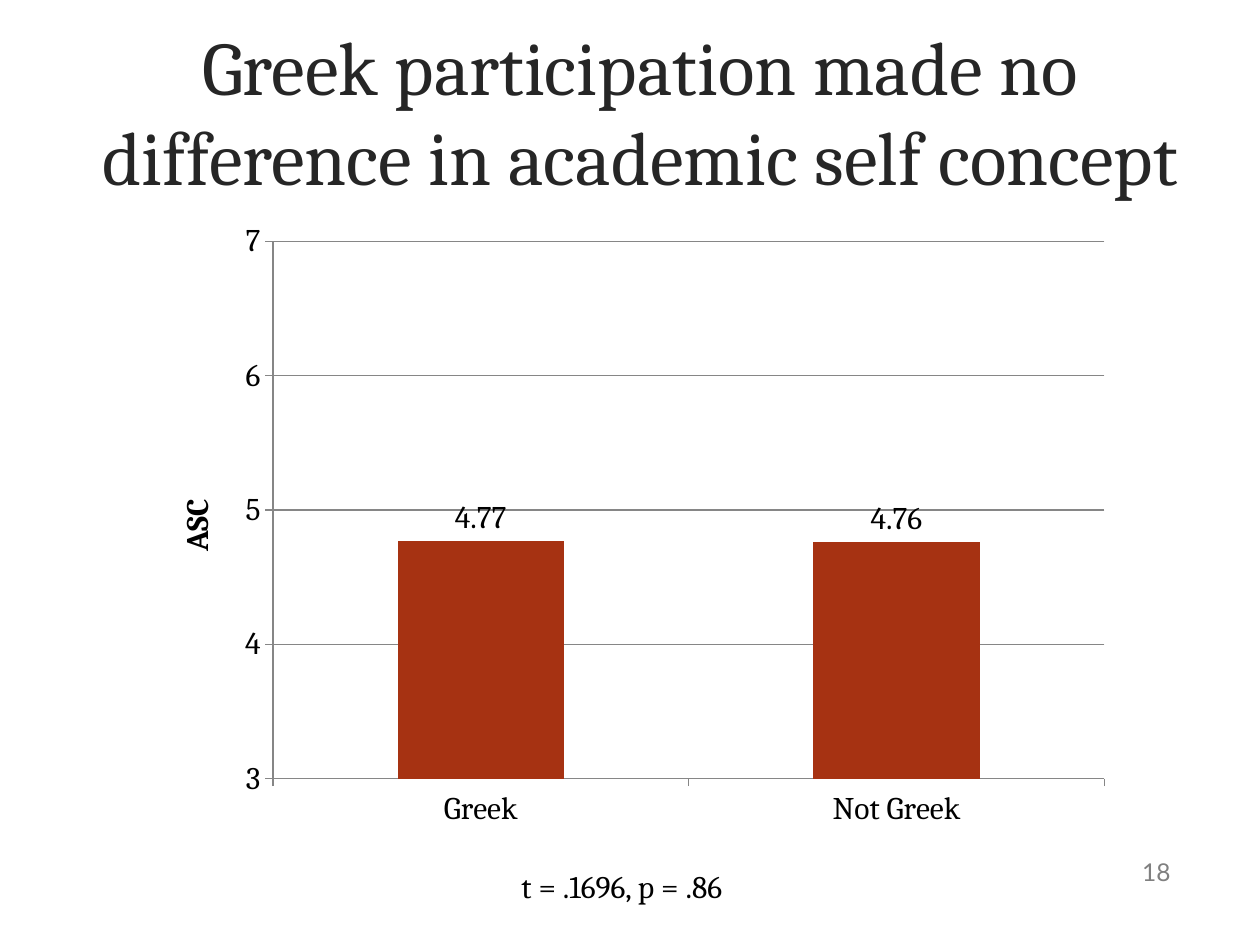
import dataclasses

import pptx
import pptx.chart.data
import pptx.dml.color
import pptx.enum.chart
import pptx.enum.text
import pptx.util
from pptx.util import Inches

COLORS = {
    "title": "262626",
    "text": "000000",
    "number": "808080",
    "bar": "A63212",
    "rule": "868686",
}
SERIF = "Cambria"
SANS = "Lato"
ALIGN = pptx.enum.text.PP_ALIGN
ANCHOR = pptx.enum.text.MSO_ANCHOR


@dataclasses.dataclass(frozen=True)
class Box:
    left: float
    top: float
    width: float
    height: float

    def lengths(self) -> tuple:
        return tuple(Inches(value) for value in dataclasses.astuple(self))


def rgb(name: str) -> pptx.dml.color.RGBColor:
    return pptx.dml.color.RGBColor.from_string(COLORS[name])


def set_font(font, size: float, color: str = "text", face: str = SERIF) -> None:
    font.size = pptx.util.Pt(size)
    font.name = face
    font.color.rgb = rgb(color)


def add_text(slide, text: str, box: Box, *, size: float, color: str = "text",
             face: str = SERIF, align=ALIGN.LEFT, anchor=ANCHOR.TOP,
             wrap: bool = True) -> None:
    frame = slide.shapes.add_textbox(*box.lengths()).text_frame
    frame.word_wrap = wrap
    frame.vertical_anchor = anchor
    paragraph = frame.paragraphs[0]
    paragraph.alignment = align
    run = paragraph.add_run()
    run.text = text
    set_font(run.font, size, color, face)


def style_rule(line) -> None:
    line.color.rgb = rgb("rule")
    line.width = pptx.util.Pt(0.75)


def add_concept_chart(slide, box: Box) -> None:
    scores = pptx.chart.data.CategoryChartData()
    scores.categories = ["Greek", "Not Greek"]
    scores.add_series("Series 1", [4.77, 4.76])
    chart = slide.shapes.add_chart(
        pptx.enum.chart.XL_CHART_TYPE.COLUMN_CLUSTERED, *box.lengths(), scores
    ).chart
    chart.has_legend = False
    chart.has_title = False
    set_font(chart.font, 18)

    # Axes
    score_axis = chart.value_axis
    score_axis.minimum_scale = 3
    score_axis.maximum_scale = 7
    score_axis.major_unit = 1
    score_axis.has_major_gridlines = True
    style_rule(score_axis.major_gridlines.format.line)
    for axis in (chart.category_axis, score_axis):
        axis.major_tick_mark = pptx.enum.chart.XL_TICK_MARK.OUTSIDE
        style_rule(axis.format.line)
    score_title = score_axis.axis_title.text_frame
    score_title.text = "ASC"
    title_font = score_title.paragraphs[0].runs[0].font
    set_font(title_font, 18)
    title_font.bold = True

    # Bars and their values
    plot = chart.plots[0]
    plot.gap_width = 150
    plot.vary_by_categories = False
    bars = plot.series[0]
    bars.format.fill.solid()
    bars.format.fill.fore_color.rgb = rgb("bar")
    labels = bars.data_labels
    labels.show_value = True
    labels.position = pptx.enum.chart.XL_LABEL_POSITION.OUTSIDE_END
    set_font(labels.font, 18)


def main() -> None:
    deck = pptx.Presentation()
    deck.slide_width = Inches(10)
    deck.slide_height = Inches(7.5)
    slide = deck.slides.add_slide(deck.slide_layouts[6])

    # Title
    add_text(slide, "Greek participation made no difference in academic self concept",
             Box(0.33, 0.25, 9.5, 1.25), size=43.2, color="title",
             align=ALIGN.CENTER, anchor=ANCHOR.MIDDLE)
    # Test result
    add_text(slide, "t = .1696, p = .86", Box(4.04, 6.83, 1.92, 0.4),
             size=18, wrap=False)
    # Chart
    add_concept_chart(slide, Box(1.17, 1.67, 7.75, 5))
    # Slide number
    add_text(slide, "18", Box(7.06, 6.72, 2.33, 0.4), size=14, color="number",
             face=SANS, align=ALIGN.RIGHT, anchor=ANCHOR.MIDDLE)

    deck.save("out.pptx")


if __name__ == "__main__":
    main()
